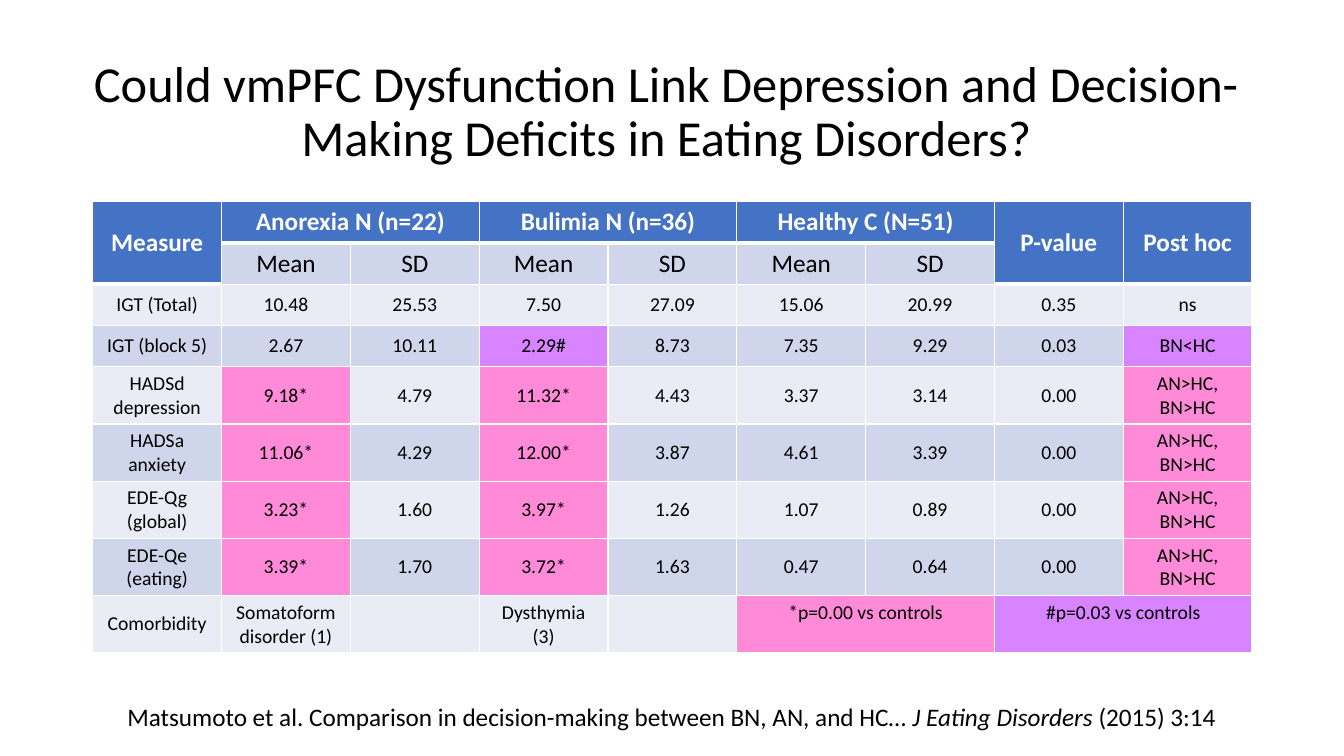
from dataclasses import dataclass

import pptx
import pptx.dml.color
import pptx.enum.text
import pptx.oxml
import pptx.oxml.ns
import pptx.util
from pptx.util import Inches


@dataclass(frozen=True)
class Theme:
    font: str = "Calibri"
    black: str = "000000"
    white: str = "FFFFFF"
    header: str = "4472C4"
    dark_band: str = "CFD5EA"
    light_band: str = "E9EBF5"
    pink: str = "FF8AD8"
    purple: str = "D883FF"
    title_size: int = 36
    large_size: int = 18
    cell_size: int = 14
    rule: float = 1
    header_rule: float = 3


THEME = Theme()
CENTER = pptx.enum.text.PP_ALIGN.CENTER
TOP = pptx.enum.text.MSO_ANCHOR.TOP
MIDDLE = pptx.enum.text.MSO_ANCHOR.MIDDLE

TITLE = ("Could vmPFC Dysfunction Link Depression and "
         "Decision-Making Deficits in Eating Disorders?")
CITATION = [
    ("Matsumoto et al. Comparison in decision-making between BN, AN, and HC… ", False),
    ("J Eating Disorders ", True),
    ("(2015) 3:14", False),
]
BOTH = "AN>HC, BN>HC"
ROWS = [
    ["Measure", "Anorexia N (n=22)", "", "Bulimia N (n=36)", "",
     "Healthy C (N=51)", "", "P-value", "Post hoc"],
    ["", "Mean", "SD", "Mean", "SD", "Mean", "SD", "", ""],
    ["IGT (Total)", "10.48", "25.53", "7.50", "27.09", "15.06", "20.99", "0.35", "ns"],
    ["IGT (block 5)", "2.67", "10.11", "2.29#", "8.73", "7.35", "9.29", "0.03", "BN<HC"],
    ["HADSd depression", "9.18*", "4.79", "11.32*", "4.43", "3.37", "3.14", "0.00", BOTH],
    ["HADSa\nanxiety", "11.06*", "4.29", "12.00*", "3.87", "4.61", "3.39", "0.00", BOTH],
    ["EDE-Qg (global)", "3.23*", "1.60", "3.97*", "1.26", "1.07", "0.89", "0.00", BOTH],
    ["EDE-Qe (eating)", "3.39*", "1.70", "3.72*", "1.63", "0.47", "0.64", "0.00", BOTH],
    ["Comorbidity", "Somatoform disorder (1)", "", "Dysthymia (3)", "",
     "*p=0.00 vs controls", "", "#p=0.03 vs controls", ""],
]
LAST = len(ROWS) - 1
TALL_HEADERS = (0, 7, 8)
# First row, first column, last row, last column
MERGES = ([(0, c, 1, c) for c in TALL_HEADERS]
          + [(0, c, 0, c + 1) for c in (1, 3, 5)]
          + [(LAST, c, LAST, c + 1) for c in (5, 7)])


def add_run(p, text, size, color=THEME.black, bold=False, italic=False):
    r = p.add_run()
    r.text = text
    r.font.name = THEME.font
    r.font.size = pptx.util.Pt(size)
    r.font.bold = bold
    r.font.italic = italic
    r.font.color.rgb = pptx.dml.color.RGBColor.from_string(color)


def add_title(s, left, top, width, height):
    sp = s.shapes.title
    sp.left, sp.top, sp.width, sp.height = left, top, width, height
    tf = sp.text_frame
    tf.auto_size = pptx.enum.text.MSO_AUTO_SIZE.NONE
    tf.vertical_anchor = MIDDLE
    p = tf.paragraphs[0]
    p.alignment = CENTER
    p.line_spacing = 0.9
    add_run(p, TITLE, THEME.title_size)


def is_header(row, col):
    return row == 0 or (row == 1 and col in TALL_HEADERS)


def cell_color(row, col, text):
    """Significance marks and post hoc results override the row banding."""
    if is_header(row, col):
        return THEME.header
    if "#" in text or text == "BN<HC":
        return THEME.purple
    if "*" in text or text == BOTH:
        return THEME.pink
    return THEME.dark_band if row % 2 else THEME.light_band


def add_borders(cell, bottom):
    tc_pr = cell._tc.get_or_add_tcPr()
    widths = {"L": THEME.rule, "R": THEME.rule, "T": THEME.rule, "B": bottom}
    for side, width in widths.items():
        tc_pr.append(pptx.oxml.parse_xml(
            f'<a:ln{side} {pptx.oxml.ns.nsdecls("a")} w="{pptx.util.Pt(width)}">'
            f'<a:solidFill><a:srgbClr val="{THEME.white}"/></a:solidFill></a:ln{side}>'))


def fill_cell(cell, row, col, text):
    header = is_header(row, col)
    add_borders(cell, THEME.header_rule if header else THEME.rule)
    cell.fill.solid()
    cell.fill.fore_color.rgb = pptx.dml.color.RGBColor.from_string(
        cell_color(row, col, text))
    cell.vertical_anchor = TOP if row == LAST and col >= 5 else MIDDLE
    if not text:
        return
    tf = cell.text_frame
    for i, line in enumerate(text.split("\n")):
        p = tf.add_paragraph() if i else tf.paragraphs[0]
        p.alignment = CENTER
        add_run(p, line, THEME.large_size if row < 2 else THEME.cell_size,
                THEME.white if header else THEME.black, bold=header)


def add_results_table(s, left, top, width, height):
    cols = len(ROWS[0])
    table = s.shapes.add_table(len(ROWS), cols, left, top, width, height).table
    table.first_row = False
    table.horz_banding = False
    for row, texts in enumerate(ROWS):
        for col, text in enumerate(texts):
            fill_cell(table.cell(row, col), row, col, text)
    for row, col, end_row, end_col in MERGES:
        table.cell(row, col).merge(table.cell(end_row, end_col))


def add_citation(s, left, top, width, height):
    tf = s.shapes.add_textbox(left, top, width, height).text_frame
    tf.word_wrap = False
    tf.auto_size = pptx.enum.text.MSO_AUTO_SIZE.SHAPE_TO_FIT_TEXT
    p = tf.paragraphs[0]
    p.alignment = CENTER
    for text, italic in CITATION:
        add_run(p, text, THEME.large_size, italic=italic)


def main():
    prs = pptx.Presentation()
    prs.slide_width, prs.slide_height = Inches(13.33), Inches(7.5)
    s = prs.slides.add_slide(prs.slide_layouts.get_by_name("Title Only"))
    add_title(s, Inches(0.5), Inches(0.4), Inches(12.22), Inches(1.45))
    add_citation(s, Inches(1.13), Inches(6.91), Inches(11.06), Inches(0.4))
    add_results_table(s, Inches(0.92), Inches(2), Inches(11.5), Inches(0.41 * len(ROWS)))
    prs.save("out.pptx")


if __name__ == "__main__":
    main()
